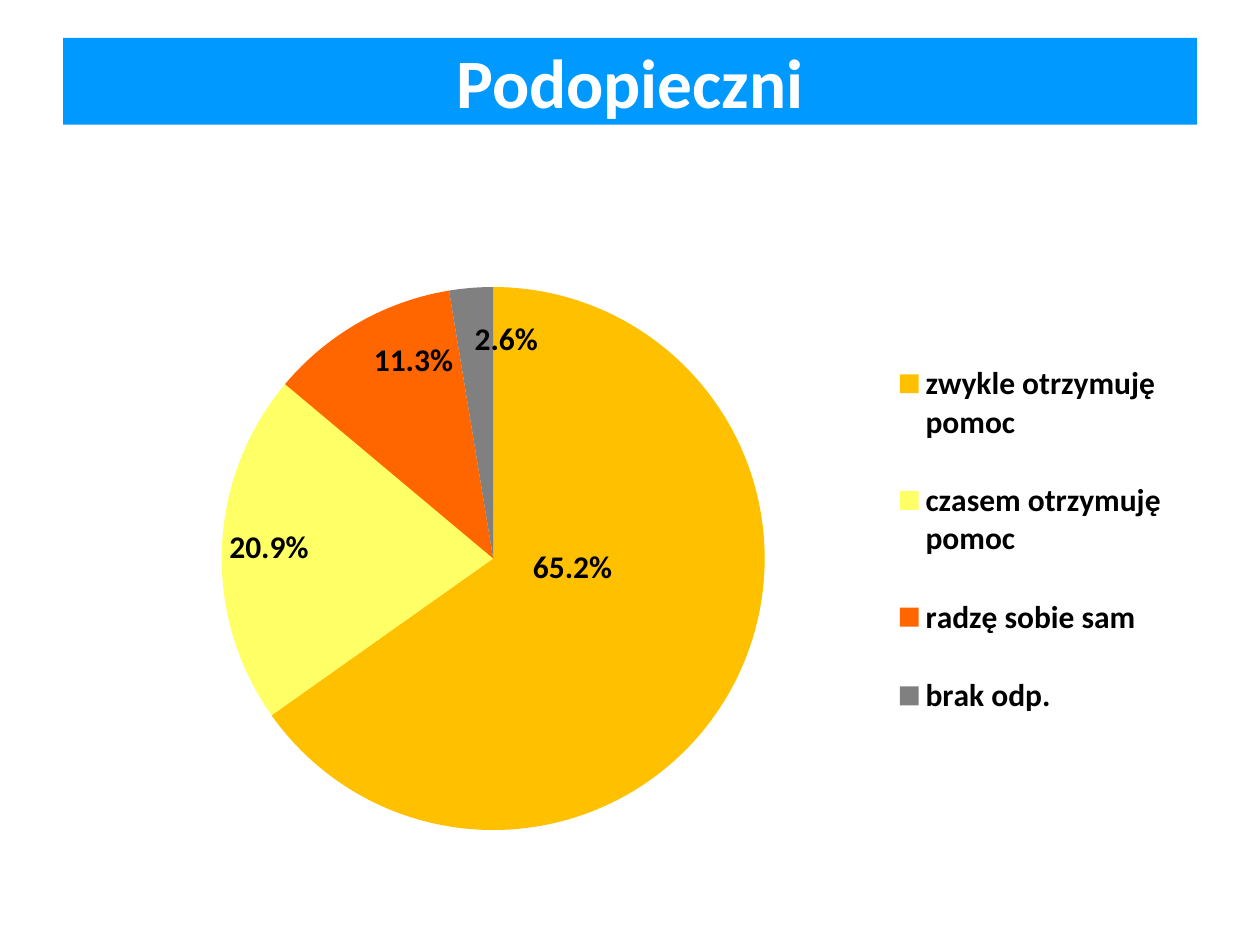
import pptx
import pptx.chart.data
import pptx.dml.color
import pptx.enum.chart
import pptx.enum.text
import pptx.oxml
import pptx.oxml.ns
import pptx.util
from pptx.util import Inches

FONT = "Calibri"
# Category, share, slice colour, label shift as a fraction of the chart
ANSWERS = [
    ("zwykle otrzymuję pomoc", 0.652, "FFC000", (-0.10, -0.15)),
    ("czasem otrzymuję pomoc", 0.209, "FFFF66", None),
    ("radzę sobie sam", 0.113, "FF6600", (0.01, 0.02)),
    ("brak odp.", 0.026, "808080", (0.03, 0.04)),
]


def color(hex_value):
    return pptx.dml.color.RGBColor.from_string(hex_value)


def fill(target, hex_value):
    target.fill.solid()
    target.fill.fore_color.rgb = color(hex_value)


def style_font(font, size, hex_value):
    font.name = FONT
    font.size = pptx.util.Pt(size)
    font.bold = True
    font.color.rgb = color(hex_value)


def manual_layout(inner=False, **values):
    """Return a c:layout element; values are fractions of the chart."""
    children = []
    if inner:
        children.append('<c:layoutTarget val="inner"/>')
    if "w" in values:
        children.append('<c:xMode val="edge"/><c:yMode val="edge"/>')
    children += [f'<c:{name} val="{value}"/>' for name, value in values.items()]
    return pptx.oxml.parse_xml(
        f'<c:layout {pptx.oxml.ns.nsdecls("c")}><c:manualLayout>'
        f'{"".join(children)}</c:manualLayout></c:layout>'
    )


def add_title(slide, text):
    title = slide.shapes.title
    title.left, title.top = Inches(0.5), Inches(0.3)
    title.width, title.height = Inches(9), Inches(0.69)
    fill(title, "0099FF")
    frame = title.text_frame
    frame.text = text
    frame.auto_size = pptx.enum.text.MSO_AUTO_SIZE.NONE
    frame.vertical_anchor = pptx.enum.text.MSO_ANCHOR.MIDDLE
    paragraph = frame.paragraphs[0]
    paragraph.alignment = pptx.enum.text.PP_ALIGN.CENTER
    style_font(paragraph.runs[0].font, 39.6, "FFFFFF")


def style_legend(chart):
    chart.has_legend = True
    legend = chart.legend
    legend.position = pptx.enum.chart.XL_LEGEND_POSITION.RIGHT
    legend.include_in_layout = False
    style_font(legend.font, 18, "000000")
    legend_element = legend._element
    for layout in legend_element.findall(pptx.oxml.ns.qn("c:layout")):
        legend_element.remove(layout)
    position = legend_element.find(pptx.oxml.ns.qn("c:legendPos"))
    position.addnext(manual_layout(x=0.71, y=0.16, w=0.27, h=0.69))


def style_slices(plot):
    inside_end = pptx.enum.chart.XL_LABEL_POSITION.INSIDE_END
    plot.vary_by_categories = True
    plot.has_data_labels = True
    labels = plot.series[0].data_labels
    labels.show_value = True
    labels.show_percentage = False
    labels.number_format = "0.0%"
    labels.number_format_is_linked = False
    labels.position = inside_end
    style_font(labels.font, 18, "000000")
    for index, (_, _, slice_color, shift) in enumerate(ANSWERS):
        point = plot.series[0].points[index]
        fill(point.format, slice_color)
        if shift:
            label = point.data_label
            style_font(label.font, 18, "000000")
            label.position = inside_end
            label_element = labels._element.findall(pptx.oxml.ns.qn("c:dLbl"))[-1]
            label_element.insert(1, manual_layout(x=shift[0], y=shift[1]))


def add_pie(slide):
    data = pptx.chart.data.CategoryChartData(number_format="0.0%")
    data.categories = [answer[0] for answer in ANSWERS]
    data.add_series("Series 1", [answer[1] for answer in ANSWERS])
    chart = slide.shapes.add_chart(
        pptx.enum.chart.XL_CHART_TYPE.PIE,
        Inches(0.43), Inches(1.78), Inches(9.17), Inches(4.96), data,
    ).chart
    chart.has_title = False
    chart.font.name = FONT
    chart.font.size = pptx.util.Pt(10)
    style_legend(chart)
    style_slices(chart.plots[0])
    # Place the pie left of the legend
    plot_area = chart._chartSpace.chart.plotArea
    for layout in plot_area.findall(pptx.oxml.ns.qn("c:layout")):
        plot_area.remove(layout)
    plot_area.insert(0, manual_layout(inner=True, x=0.145, y=0.1, w=0.47, h=0.87))


def main():
    presentation = pptx.Presentation()
    presentation.slide_width = Inches(10)
    presentation.slide_height = Inches(7.5)
    slide = presentation.slides.add_slide(presentation.slide_layouts[5])
    add_title(slide, "Podopieczni")
    add_pie(slide)
    presentation.save("out.pptx")


if __name__ == "__main__":
    main()
